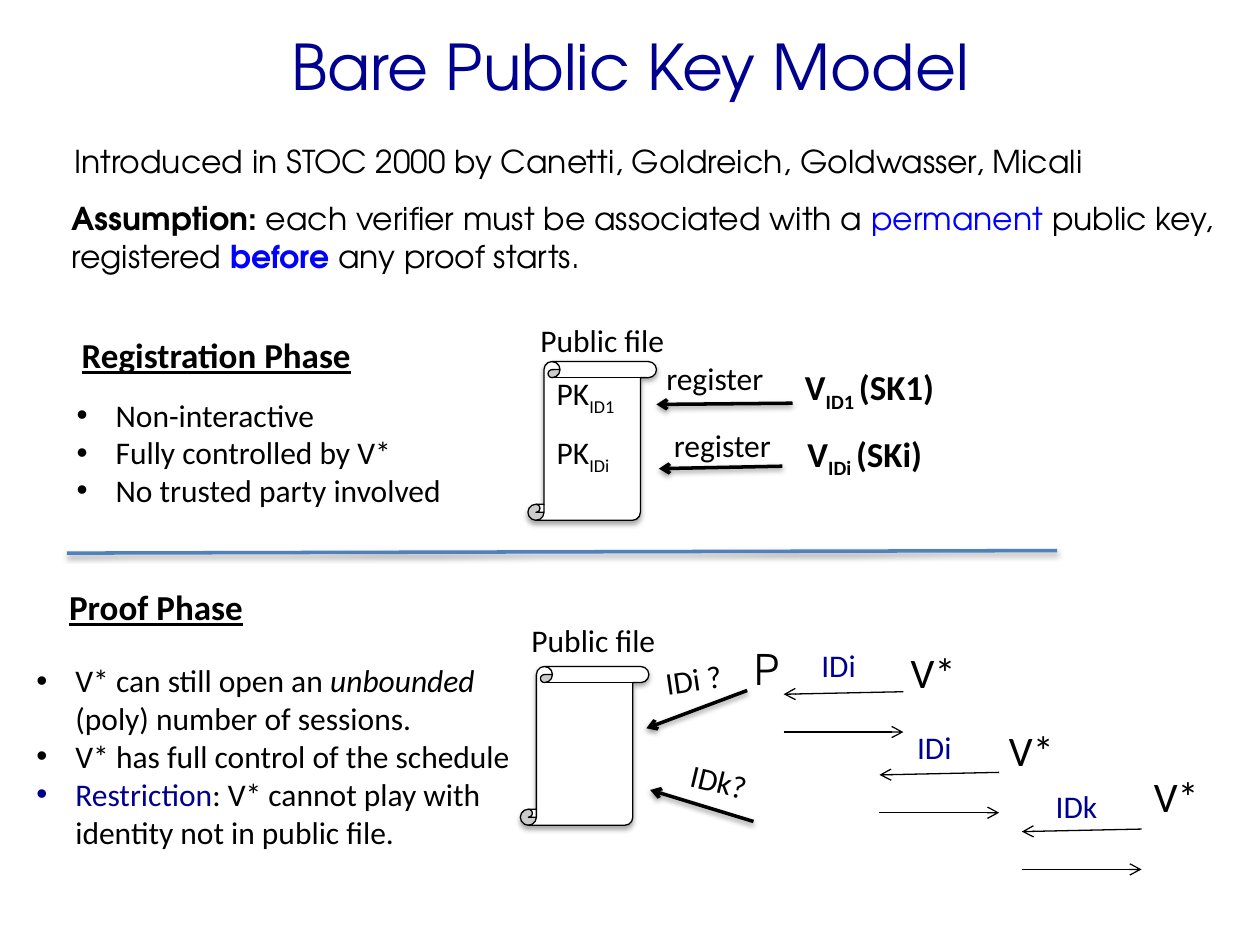
from lxml import etree
from pptx import Presentation, util as u
from pptx.dml.color import RGBColor
from pptx.enum import shapes, text
from pptx.oxml.ns import qn

PX = 9144
BLACK = RGBColor(0, 0, 0)
WHITE = RGBColor(255, 255, 255)
NAVY = RGBColor(0, 0, 0x90)
BLUE = RGBColor(0, 0, 255)
STEEL = RGBColor(0x4F, 0x81, 0xBD)
ADVENTOR = "TeX Gyre Adventor"
CALIBRI = "Calibri"


def px(*values):
    return [v * PX for v in values]


def format_run(r, size, font, color, bold=False, italic=False, underline=False, sub=False):
    f = r.font
    f.size, f.name = u.Pt(size), font
    f.bold, f.italic, f.underline = bold, italic, underline
    f.color.rgb = color
    if sub:
        r._r.get_or_add_rPr().set("baseline", "-25000")


def add_bullet(p):
    pPr = p._p.get_or_add_pPr()
    pPr.set("marL", str(31 * PX))
    pPr.set("indent", str(-31 * PX))
    etree.SubElement(pPr, qn("a:buFont"), typeface="Arial")
    etree.SubElement(pPr, qn("a:buChar"), char="•")


def fill_text(tf, paragraphs, size=18, font=CALIBRI, color=BLACK, bullet=False, **fmt):
    base = dict(size=size, font=font, color=color, **fmt)
    for i, runs in enumerate(paragraphs):
        p = tf.paragraphs[0] if i == 0 else tf.add_paragraph()
        if bullet:
            add_bullet(p)
        for run in [runs] if isinstance(runs, str) else runs:
            words, extra = (run, {}) if isinstance(run, str) else run
            r = p.add_run()
            r.text = words
            format_run(r, **{**base, **extra})


def add_text(s, box, *paragraphs, rotation=0, wrap=True, **fmt):
    sp = s.shapes.add_textbox(*px(*box))
    sp.rotation = rotation
    tf = sp.text_frame
    tf.word_wrap = wrap
    tf.auto_size = text.MSO_AUTO_SIZE.SHAPE_TO_FIT_TEXT
    fill_text(tf, paragraphs, **fmt)


def add_shadow(effects, alpha, distance):
    shadow = etree.SubElement(effects, qn("a:outerShdw"), blurRad=str(u.Pt(3.1)),
                              dist=str(u.Pt(distance)), dir="5400000", rotWithShape="0")
    color = etree.SubElement(shadow, qn("a:srgbClr"), val="000000")
    etree.SubElement(color, qn("a:alpha"), val=str(alpha * 1000))


def add_line(s, start, end, width=2, color=BLACK, arrow=True, shadow=True):
    line = s.shapes.add_connector(shapes.MSO_CONNECTOR.STRAIGHT, *px(*start, *end))
    line.line.width = u.Pt(width)
    line.line.color.rgb = color
    if arrow:
        etree.SubElement(line.line._get_or_add_ln(), qn("a:tailEnd"), type="arrow")
    effects = etree.SubElement(line._element.spPr, qn("a:effectLst"))
    if shadow:
        add_shadow(effects, 38, 1.6)


def add_public_file(s, x, y):
    sp = s.shapes.add_shape(shapes.MSO_SHAPE.VERTICAL_SCROLL, *px(x, y, 102, 126))
    sp.fill.solid()
    sp.fill.fore_color.rgb = WHITE
    sp.line.color.rgb = BLACK
    sp.line.width = u.Pt(0.75)
    sp.shadow.inherit = False
    add_shadow(sp._element.spPr.find(qn("a:effectLst")), 35, 1.8)


def add_session(s, x, y, name, name_at, verifier_at):
    add_line(s, (x + 95, y - 2), (x, y), width=0.75, shadow=False)
    add_line(s, (x, y + 30), (x + 95, y + 30), width=0.75, shadow=False)
    add_text(s, (*name_at, 61, 40), name, color=NAVY)
    add_text(s, (*verifier_at, 56, 50), "V*", size=24, wrap=False)


def add_heading(s, x, y, words):
    add_text(s, (x, y, 355, 44), words, size=20, bold=True, underline=True)


def add_intro(s):
    title = s.shapes.title
    title.left, title.top, title.width, title.height = px(50, -11, 900, 125)
    tf = title.text_frame
    tf.vertical_anchor = text.MSO_ANCHOR.MIDDLE
    fill_text(tf, ["Bare Public Key Model"], size=36, font=ADVENTOR, color=NAVY)
    tf.paragraphs[0].alignment = text.PP_ALIGN.CENTER
    add_text(s, (49, 108, 868, 40),
             "Introduced in STOC 2000 by Canetti, Goldreich, Goldwasser, Micali", font=ADVENTOR)
    add_text(s, (47, 153, 1021, 71),
             [("Assumption: ", dict(bold=True)), "each verifier must be associated with a ",
              ("permanent", dict(color=BLUE)), " public key,"],
             ["registered ", ("before", dict(color=BLUE, bold=True)), " any proof starts."],
             font=ADVENTOR)


def add_registration(s):
    add_heading(s, 55, 260, "Registration Phase")
    add_text(s, (51, 309, 333, 101), "Non-interactive", "Fully controlled by V*",
             "No trusted party involved", bullet=True)
    add_public_file(s, 419, 287)
    add_text(s, (419, 250, 159, 40), "Public file")
    sub = dict(sub=True)
    for name, key_at, verifier_at, label_at, start, end in (
        ("1", (432, 292, 83, 40), (629, 285, 225, 44), (519, 280, 113, 40), (629, 320), (521, 321)),
        ("i", (432, 339, 67, 40), (631, 338, 147, 44), (525, 333, 106, 40), (621, 370), (523, 372)),
    ):
        add_text(s, key_at, ["PK", (f"ID{name}", sub)])
        add_text(s, verifier_at, ["V", (f"ID{name} ", sub), f"(SK{name})"], size=20, bold=True)
        add_line(s, start, end)
        add_text(s, label_at, "register")


def add_proof(s):
    add_heading(s, 45, 460, "Proof Phase")
    add_text(s, (19, 520, 400, 162),
             ["V* can still open an ", ("unbounded", dict(italic=True)),
              " (poly) number of sessions."],
             "V* has full control of the schedule",
             [("Restriction", dict(color=NAVY)),
              ": V* cannot play with identity not in public file."],
             bullet=True)
    add_public_file(s, 413, 529)
    add_text(s, (412, 488, 120, 40), "Public file")
    add_text(s, (589, 506, 69, 50), "P", size=24, font=ADVENTOR)
    add_line(s, (593, 548), (513, 578))
    add_text(s, (518, 517, 92, 40), "IDi ?", rotation=351.7)
    add_line(s, (598, 652), (516, 627))
    add_text(s, (538, 603, 92, 40), "IDk?", rotation=13.4)
    add_session(s, 622, 551, "IDi", (642, 508), (713, 508))
    add_session(s, 698, 615, "IDi", (718, 573), (791, 570))
    add_session(s, 811, 660, "IDk", (828, 620), (906, 607))


def main():
    prs = Presentation()
    prs.slide_width, prs.slide_height = px(1000, 750)
    s = prs.slides.add_slide(prs.slide_layouts[5])
    add_intro(s)
    add_registration(s)
    add_line(s, (53, 439), (839, 437), color=STEEL, arrow=False)
    add_proof(s)
    prs.save("out.pptx")


if __name__ == "__main__":
    main()
